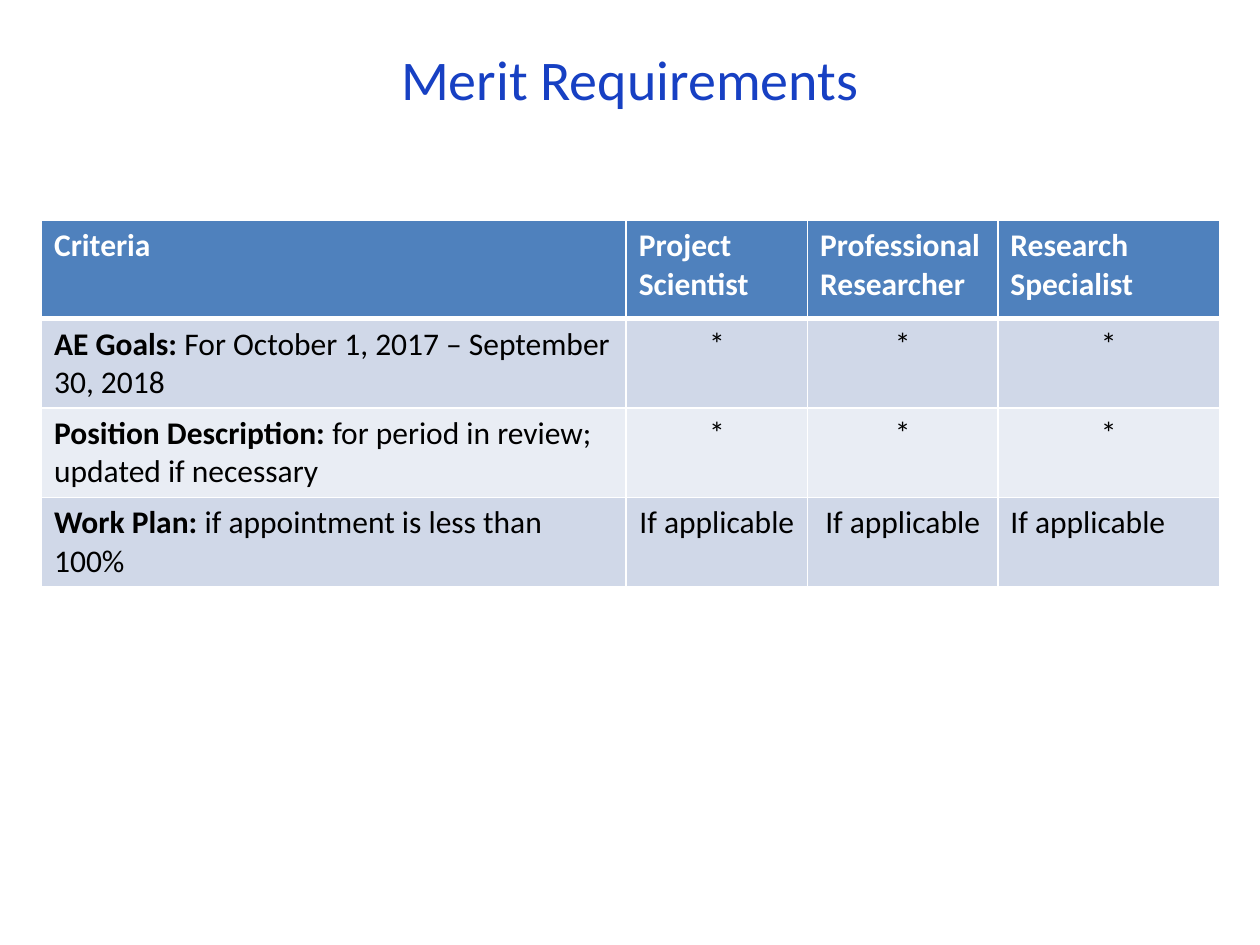
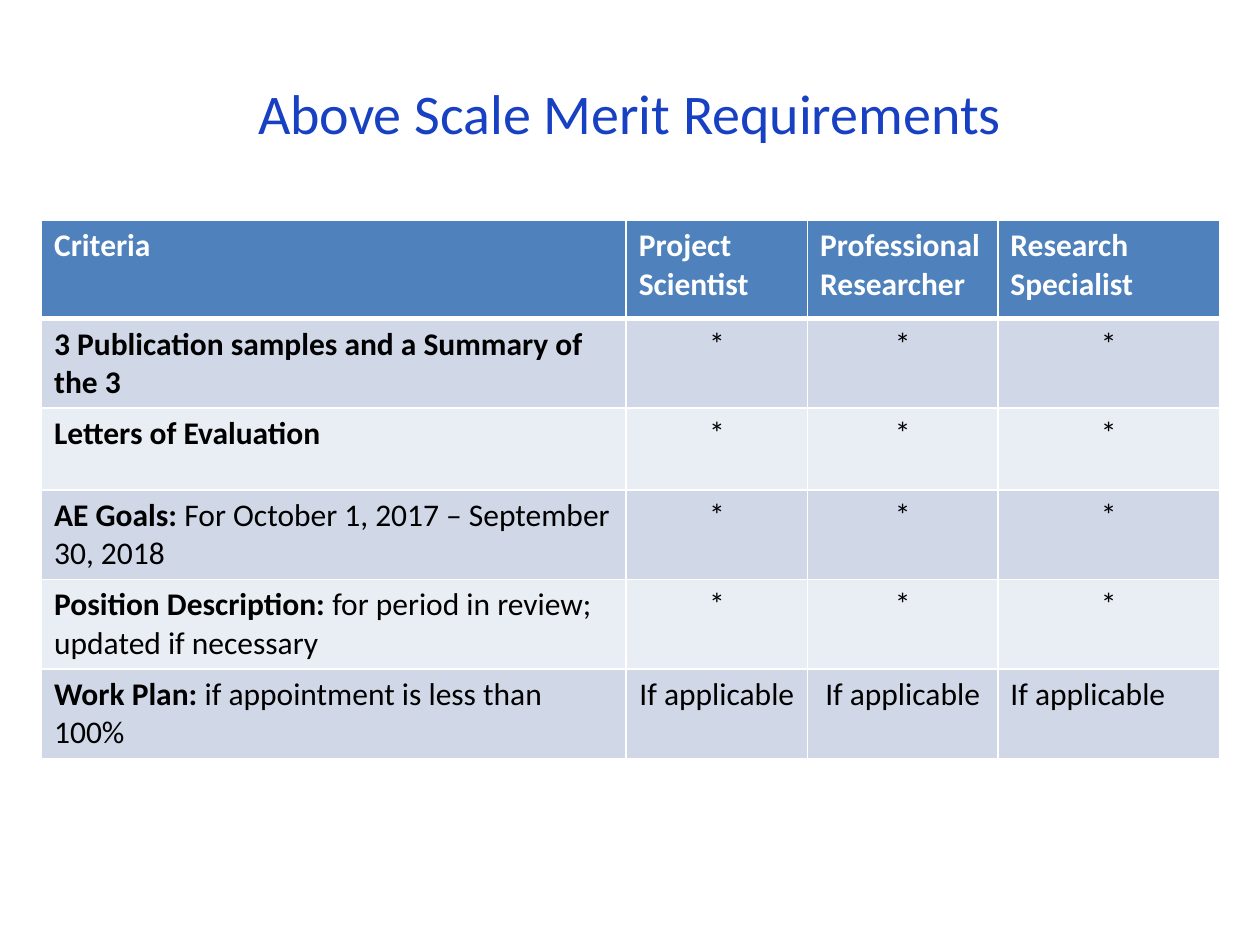
"""Build two slides that list merit requirements by research title."""
import dataclasses

import lxml.etree
import pptx
import pptx.dml.color
import pptx.enum.text
import pptx.oxml.ns
import pptx.util

Inches = pptx.util.Inches
ALIGN = pptx.enum.text.PP_ALIGN
ANCHOR = pptx.enum.text.MSO_ANCHOR

FONT = "Calibri"
COLORS = {
    "title": "1740C3",
    "head": "4F81BD",
    "odd": "D0D8E8",
    "even": "E9EDF4",
    "white": "FFFFFF",
    "black": "000000",
}
WIDTHS = (4.64, 1.44, 1.51, 1.76)
HEADS = ("Criteria", "Project Scientist", "Professional Researcher", "Research Specialist")


@dataclasses.dataclass(frozen=True)
class Row:
    label: str
    detail: str = ""
    mark: str = "*"
    last: ALIGN = ALIGN.CENTER
    height: float = 0.71


@dataclasses.dataclass(frozen=True)
class Page:
    title: str
    top: float
    rows: tuple[Row, ...]


SHARED = (
    Row("AE Goals: ", "For October 1, 2017 – September 30, 2018"),
    Row("Position Description: ", "for period in review; updated if necessary"),
    Row("Work Plan: ", "if appointment is less than 100%", "If applicable", ALIGN.LEFT),
)
EXTRA = (
    Row("3 Publication samples and a Summary of the 3"),
    Row("Letters of Evaluation", height=0.65),
)
PAGES = (
    Page("Merit Requirements", 0.2, SHARED),
    Page("Above Scale Merit Requirements", 0.47, EXTRA + SHARED),
)


def rgb(name: str) -> pptx.dml.color.RGBColor:
    return pptx.dml.color.RGBColor.from_string(COLORS[name])


def write(frame, text: str, *, size: int = 18, color: str = "black",
          bold: bool = False, align: ALIGN = ALIGN.LEFT) -> None:
    para = frame.paragraphs[0]
    para.alignment = align
    run = para.add_run()
    run.text = text
    run.font.name = FONT
    run.font.size = pptx.util.Pt(size)
    run.font.bold = bold
    run.font.color.rgb = rgb(color)


def style_cell(cell, fill: str, top: int = 1, bottom: int = 1) -> None:
    props = cell._tc.get_or_add_tcPr()
    qn = pptx.oxml.ns.qn
    for side, width in (("L", 1), ("R", 1), ("T", top), ("B", bottom)):
        line = lxml.etree.SubElement(props, qn(f"a:ln{side}"), w=str(pptx.util.Pt(width)))
        solid = lxml.etree.SubElement(line, qn("a:solidFill"))
        lxml.etree.SubElement(solid, qn("a:srgbClr"), val=COLORS["white"])
    cell.fill.solid()
    cell.fill.fore_color.rgb = rgb(fill)


def add_title(slide, page: Page) -> None:
    box = slide.shapes.add_textbox(Inches(0.5), Inches(page.top), Inches(9), Inches(0.84))
    box.text_frame.word_wrap = True
    box.text_frame.vertical_anchor = ANCHOR.MIDDLE
    write(box.text_frame, page.title, size=32, color="title", align=ALIGN.CENTER)


def add_grid(slide, rows: tuple[Row, ...]) -> None:
    heights = [0.78, *(row.height for row in rows)]
    table = slide.shapes.add_table(
        len(heights), len(WIDTHS), Inches(0.33), Inches(1.75),
        Inches(sum(WIDTHS)), Inches(sum(heights))).table
    for col, width in zip(table.columns, WIDTHS):
        col.width = Inches(width)
    for line, height in zip(table.rows, heights):
        line.height = Inches(height)
    for col, head in enumerate(HEADS):
        cell = table.cell(0, col)
        style_cell(cell, "head", bottom=3)
        write(cell.text_frame, head, color="white", bold=True)
    for index, row in enumerate(rows, 1):
        cells = table.rows[index].cells
        for cell in cells:
            style_cell(cell, "odd" if index % 2 else "even", top=3 if index == 1 else 1)
        write(cells[0].text_frame, row.label, bold=True)
        if row.detail:
            write(cells[0].text_frame, row.detail)
        for col, align in enumerate((ALIGN.CENTER, ALIGN.CENTER, row.last), 1):
            write(cells[col].text_frame, row.mark, align=align)


def main() -> None:
    deck = pptx.Presentation()
    deck.slide_width, deck.slide_height = Inches(10), Inches(7.5)
    for page in PAGES:
        slide = deck.slides.add_slide(deck.slide_layouts[6])
        add_title(slide, page)
        add_grid(slide, page.rows)
    deck.save("out.pptx")


if __name__ == "__main__":
    main()
